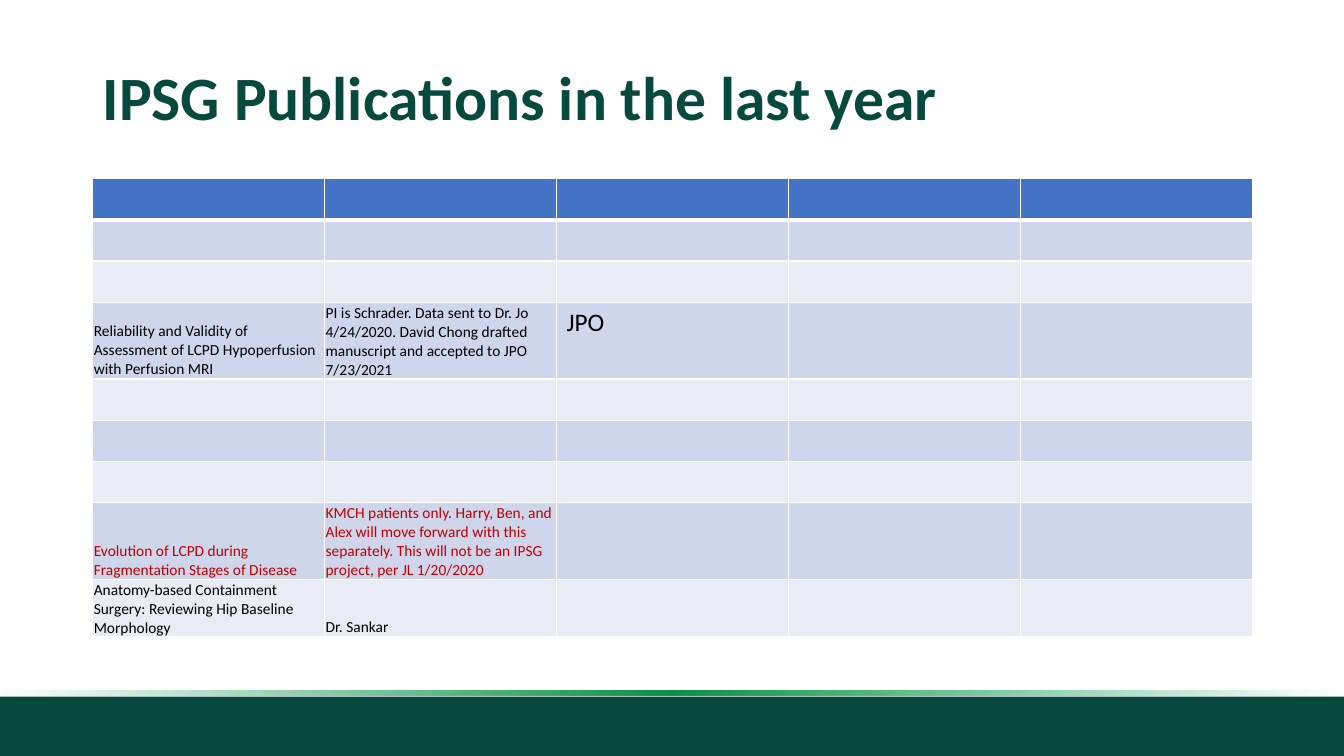
from lxml import etree
from pptx import Presentation
from pptx.dml.color import RGBColor
from pptx.enum.shapes import MSO_SHAPE
from pptx.enum.text import MSO_ANCHOR
from pptx.oxml.ns import nsdecls, qn
from pptx.oxml import parse_xml
from pptx.util import Inches, Pt

RECT = MSO_SHAPE.RECTANGLE
MIDDLE, BOTTOM = MSO_ANCHOR.MIDDLE, MSO_ANCHOR.BOTTOM
FONT = "Calibri"
COLORS = {
    "green": "07493C", "edge": "0D9D4F", "mid": "0C9049", "end": "0FAB56",
    "head": "4472C4", "dark": "CFD5EA", "light": "E9EBF5",
    "white": "FFFFFF", "black": "000000", "red": "C00000",
}


def style(para, size, color, bold=False):
    for run in para.runs:
        run.font.name = FONT
        run.font.size = Pt(size)
        run.font.bold = bold
        run.font.color.rgb = RGBColor.from_string(COLORS[color])


def border(cell, bottom):
    props = cell._tc.get_or_add_tcPr()
    for i, side in enumerate("LRTB"):
        width = Pt(bottom if side == "B" else 1)
        props.insert(i, parse_xml(
            f'<a:ln{side} {nsdecls("a")} w="{width}"><a:solidFill>'
            f'<a:srgbClr val="{COLORS["white"]}"/></a:solidFill></a:ln{side}>'))


prs = Presentation()
prs.slide_width, prs.slide_height = Inches(13.33), Inches(7.5)
slide = prs.slides.add_slide(prs.slide_layouts[6])
shapes = slide.shapes

# Footer band and the fading strip above it
for top, height in ((6.91, 0.59), (6.85, 0.05)):
    band = shapes.add_shape(RECT, 0, Inches(top), prs.slide_width, Inches(height))
    band.shadow.inherit = False
    band.line.fill.background()
    band.fill.solid()
    band.fill.fore_color.rgb = RGBColor.from_string(COLORS["green"])

band.fill.gradient()
band.fill.gradient_angle = 0
stops = band._element.spPr.find(qn("a:gradFill")).find(qn("a:gsLst"))
for stop in list(stops):
    stops.remove(stop)
for pos, color, alpha in ((0, "edge", 0), (50, "mid", 100), (100, "end", 0)):
    stop = etree.SubElement(stops, qn("a:gs"), pos=str(pos * 1000))
    tint = etree.SubElement(stop, qn("a:srgbClr"), val=COLORS[color])
    etree.SubElement(tint, qn("a:alpha"), val=str(alpha * 1000))

# Title
title = shapes.add_textbox(Inches(0.92), Inches(0.4), Inches(11.5), Inches(1.19))
frame = title.text_frame
frame.word_wrap = True
frame.vertical_anchor = MIDDLE
frame.text = "IPSG Publications in the last year"
frame.paragraphs[0].line_spacing = 0.9
style(frame.paragraphs[0], 44, "green", True)

# Table grid
heights = [0.41, 0.41, 0.41, 0.76, 0.41, 0.41, 0.41, 0.76, 0.57]
table = shapes.add_table(len(heights), 5, Inches(0.92), Inches(1.77),
                         Inches(11.5), Inches(sum(heights))).table
for col in table.columns:
    col.width = Inches(2.3)
for r, height in enumerate(heights):
    table.rows[r].height = Inches(height)
    fill = "head" if r == 0 else "dark" if r % 2 else "light"
    for cell in table.rows[r].cells:
        cell.fill.solid()
        cell.fill.fore_color.rgb = RGBColor.from_string(COLORS[fill])
        border(cell, 3 if r == 0 else 1)

# Publications: row, colour, paper, status
papers = [
    (3, "black",
     "Reliability and Validity of Assessment of LCPD Hypoperfusion with Perfusion MRI",
     "PI is Schrader. Data sent to Dr. Jo 4/24/2020. David Chong drafted "
     "manuscript and accepted to JPO 7/23/2021"),
    (7, "red",
     "Evolution of LCPD during Fragmentation Stages of Disease",
     "KMCH patients only. Harry, Ben, and Alex will move forward with this "
     "separately. This will not be an IPSG project, per JL 1/20/2020"),
    (8, "black",
     "Anatomy-based Containment Surgery: Reviewing Hip Baseline Morphology",
     "Dr. Sankar"),
]
for r, color, *texts in papers:
    for c, text in enumerate(texts):
        cell = table.cell(r, c)
        cell.text_frame.text = text
        cell.vertical_anchor = BOTTOM
        cell.margin_left = cell.margin_right = cell.margin_top = Inches(0.01)
        cell.margin_bottom = 0
        style(cell.text_frame.paragraphs[0], 11, color)

# Journal
journal = table.cell(3, 2).text_frame
journal.text = "JPO"
style(journal.paragraphs[0], 18, "black")

prs.save("out.pptx")
